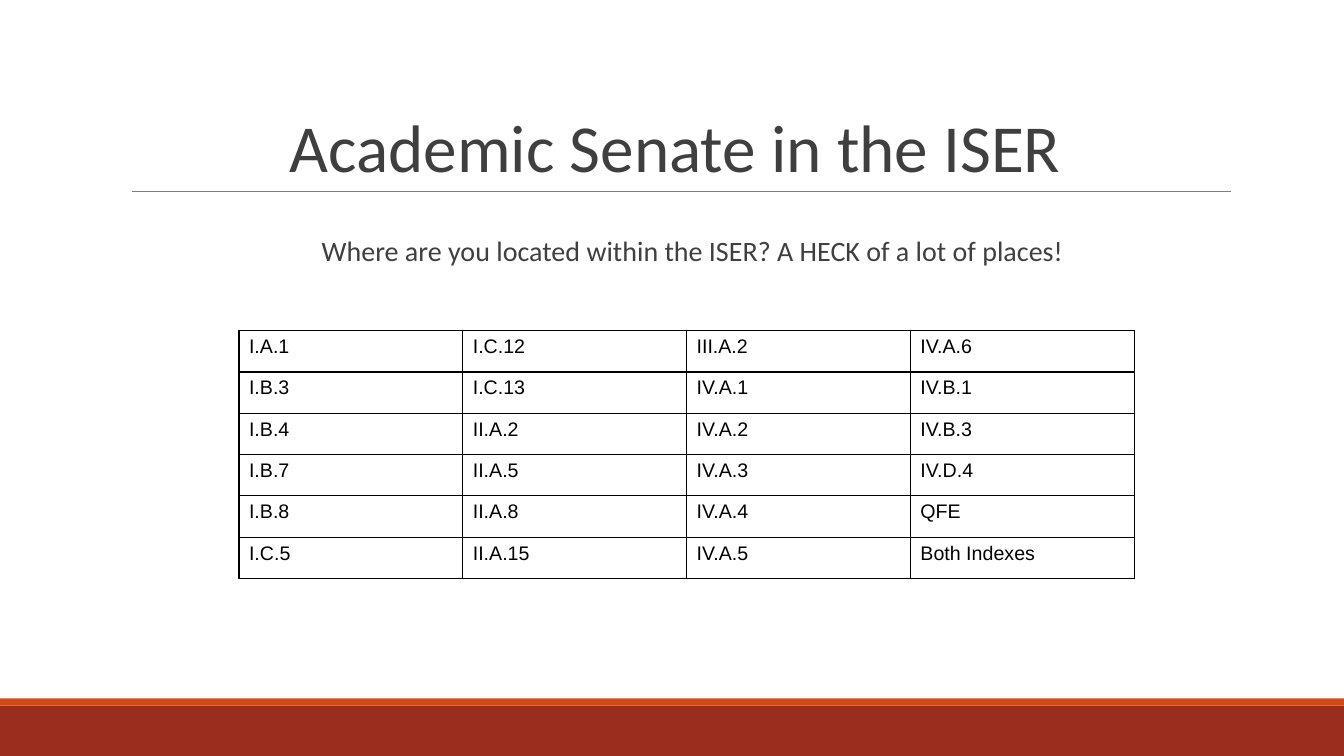
from lxml.etree import SubElement
from pptx import Presentation
from pptx.dml.color import RGBColor
from pptx.enum.shapes import MSO_CONNECTOR, MSO_SHAPE
from pptx.enum.text import MSO_ANCHOR, PP_ALIGN
from pptx.oxml import parse_xml
from pptx.oxml.ns import nsdecls, qn
from pptx.util import Inches, Pt

COLORS = {
    "band": "9B2D1F",
    "stripe": "D34817",
    "rule": "7F7F7F",
    "text": "3F3F3F",
    "grid": "000000",
}

# Standards that mention the senate, row by row
PLACES = [
    ["I.A.1", "I.C.12", "III.A.2", "IV.A.6"],
    ["I.B.3", "I.C.13", "IV.A.1", "IV.B.1"],
    ["I.B.4", "II.A.2", "IV.A.2", "IV.B.3"],
    ["I.B.7", "II.A.5", "IV.A.3", "IV.D.4"],
    ["I.B.8", "II.A.8", "IV.A.4", "QFE"],
    ["I.C.5", "II.A.15", "IV.A.5", "Both Indexes"],
]


def color(name):
    return RGBColor.from_string(COLORS[name])


def style(para, font, size, tint):
    para.font.name = font
    para.font.size = Pt(size)
    para.font.color.rgb = color(tint)


def add_bar(slide, top, height, tint):
    bar = slide.shapes.add_shape(
        MSO_SHAPE.RECTANGLE, 0, Inches(top), Inches(13.33), Inches(height))
    bar.shadow.inherit = False
    bar.fill.solid()
    bar.fill.fore_color.rgb = color(tint)
    bar.line.fill.background()


def add_rule(slide, left, right, top):
    rule = slide.shapes.add_connector(
        MSO_CONNECTOR.STRAIGHT, Inches(left), Inches(top), Inches(right), Inches(top))
    rule.line.color.rgb = color("rule")
    rule.line.width = Pt(0.75)
    SubElement(rule._element.spPr, qn("a:effectLst"))


def add_text(slide, box, text, size, spacing, inset, anchor):
    frame = slide.shapes.add_textbox(*map(Inches, box)).text_frame
    frame.word_wrap = True
    frame.vertical_anchor = anchor
    frame.margin_left = frame.margin_right = Inches(inset)
    para = frame.paragraphs[0]
    para.text = text
    para.alignment = PP_ALIGN.CENTER
    para.line_spacing = spacing
    style(para, "Calibri", size, "text")
    return para


def add_border(cell):
    # Borders come before the fill in the cell properties
    props = cell._tc.get_or_add_tcPr()
    for spot, side in enumerate(("lnL", "lnR", "lnT", "lnB")):
        props.insert(spot, parse_xml(
            f'<a:{side} {nsdecls("a")} w="{Pt(1)}"><a:solidFill>'
            f'<a:srgbClr val="{COLORS["grid"]}"/></a:solidFill></a:{side}>'))


def add_grid(slide, left, top, width, height, rows):
    count = len(rows[0])
    table = slide.shapes.add_table(
        len(rows), count, Inches(left), Inches(top),
        Inches(width * count), Inches(height * len(rows))).table
    table.first_row = table.horz_banding = False
    for line, texts in zip(table.rows, rows):
        line.height = Inches(height)
        for cell, text in zip(line.cells, texts):
            cell.text = text
            cell.fill.background()
            style(cell.text_frame.paragraphs[0], "Arial", 14, "grid")
            add_border(cell)


def main():
    deck = Presentation()
    deck.slide_width = Inches(13.33)
    deck.slide_height = Inches(7.5)
    slide = deck.slides.add_slide(deck.slide_layouts[6])

    # Footer bands and title rule
    add_bar(slide, 7, 0.5, "band")
    add_bar(slide, 6.93, 0.07, "stripe")
    add_rule(slide, 1.31, 12.21, 1.9)

    # Title and lead line
    add_text(slide, (1.2, 0.31, 11, 1.59), "Academic Senate in the ISER",
             48, 0.85, 0.1, MSO_ANCHOR.BOTTOM)
    lead = add_text(slide, (2.89, 2.31, 7.85, 0.57),
                    "Where are you located within the ISER? A HECK of a lot of places!",
                    20, 0.9, 0, MSO_ANCHOR.TOP)
    lead.space_before = Pt(12)
    lead._p.get_or_add_pPr().set("marL", str(Inches(0.11)))

    # Table of places
    add_grid(slide, 2.37, 3.28, 2.22, 0.41, PLACES)

    deck.save("out.pptx")


if __name__ == "__main__":
    main()
